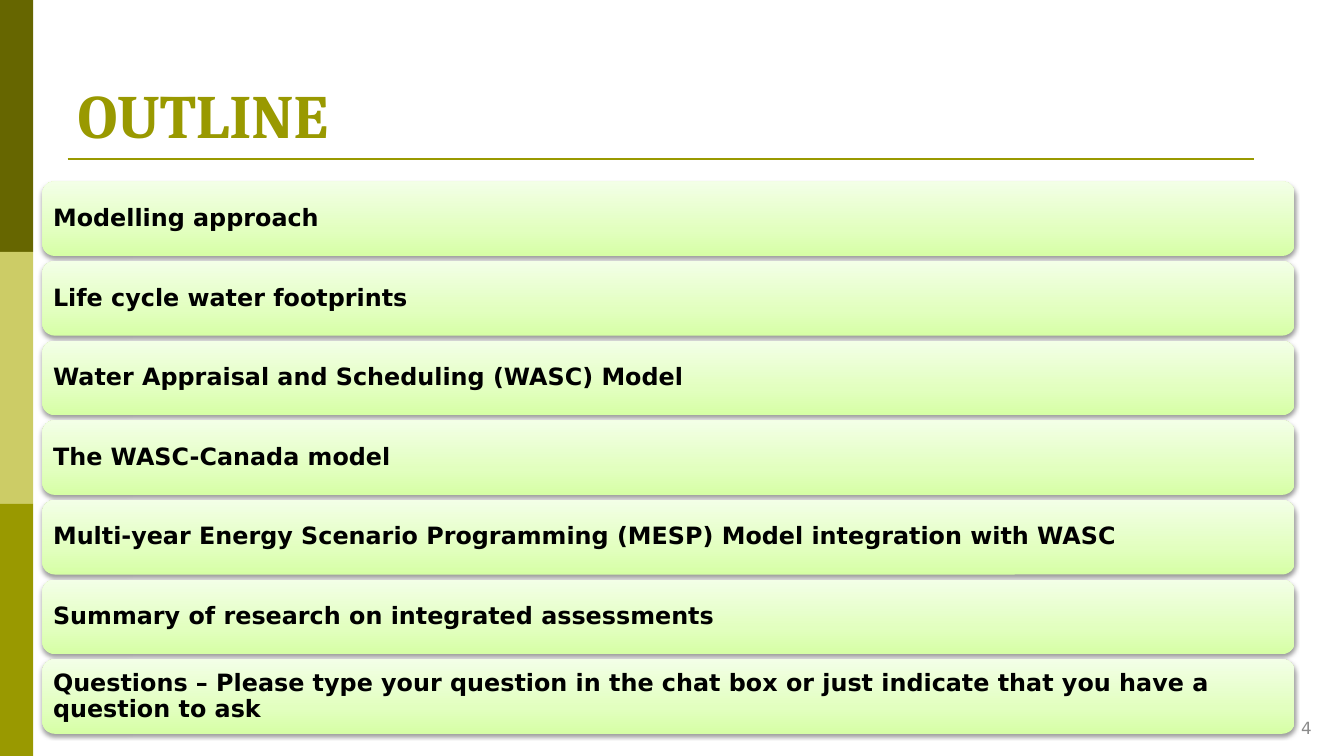
from dataclasses import dataclass

from lxml import etree
from pptx import Presentation
from pptx.dml.color import RGBColor
from pptx.enum import shapes, text
from pptx.oxml import ns, parse_xml
from pptx.util import Inches, Pt

OLIVE = RGBColor(0x99, 0x99, 0x00)
DARK_OLIVE = RGBColor(0x66, 0x66, 0x00)
PALE_OLIVE = RGBColor(0xCC, 0xCC, 0x66)
BLACK = RGBColor(0x00, 0x00, 0x00)
GREY = RGBColor(0x8C, 0x8C, 0x8C)
GREEN = RGBColor(0xD6, 0xFF, 0xA5)
LIGHT_GREEN = RGBColor(0xE2, 0xFF, 0xBF)
PALE_GREEN = RGBColor(0xF3, 0xFF, 0xE7)

BODY_FONT = "DejaVu Sans"
BAND_HEIGHT = 2.5
TOPIC_TOP = 1.8
TOPIC_PITCH = 0.79


@dataclass
class TextStyle:
    font: str
    size: float
    color: RGBColor
    bold: bool = False


@dataclass
class Topic:
    label: str
    top: float


TITLE_STYLE = TextStyle("Cambria", 44, OLIVE, True)
TOPIC_STYLE = TextStyle(BODY_FONT, 17, BLACK, True)
NUMBER_STYLE = TextStyle(BODY_FONT, 12, GREY)

LABELS = [
    "Modelling approach",
    "Life cycle water footprints",
    "Water Appraisal and Scheduling (WASC) Model",
    "The WASC-Canada model",
    "Multi-year Energy Scenario Programming (MESP) Model integration with WASC",
    "Summary of research on integrated assessments",
    "Questions – Please type your question in the chat box or just indicate "
    "that you have a question to ask",
]
TOPICS = [Topic(label, TOPIC_TOP + row * TOPIC_PITCH) for row, label in enumerate(LABELS)]


def write(shape, content: str, style: TextStyle, align, anchor):
    frame = shape.text_frame
    frame.word_wrap = True
    frame.auto_size = text.MSO_AUTO_SIZE.NONE
    frame.vertical_anchor = anchor
    paragraph = frame.paragraphs[0]
    paragraph.alignment = align
    run = paragraph.add_run()
    run.text = content
    run.font.name = style.font
    run.font.size = Pt(style.size)
    run.font.bold = style.bold
    run.font.color.rgb = style.color
    return paragraph


def add_band(slide, top: float, color: RGBColor) -> None:
    band = slide.shapes.add_shape(
        shapes.MSO_SHAPE.RECTANGLE, 0, Inches(top), Inches(0.33), Inches(BAND_HEIGHT))
    band.shadow.inherit = False
    band.fill.solid()
    band.fill.fore_color.rgb = color
    band.line.fill.background()


def add_rule(slide) -> None:
    rule = slide.shapes.add_connector(
        shapes.MSO_CONNECTOR.STRAIGHT, Inches(0.67), Inches(1.58), Inches(12.44), Inches(1.58))
    rule.line.color.rgb = OLIVE
    rule.line.width = Pt(1.5)
    etree.SubElement(rule.element.spPr, ns.qn("a:effectLst"))


def apply_gradient(shape) -> None:
    """Fill from green at the bottom to pale green at the top."""
    shape.fill.gradient()
    shape.fill.gradient_angle = 90
    stop_list = shape.element.spPr.find(f".//{ns.qn('a:gsLst')}")
    for stop in list(stop_list):
        stop_list.remove(stop)
    for percent, color in ((0, GREEN), (35, LIGHT_GREEN), (100, PALE_GREEN)):
        stop = etree.SubElement(stop_list, ns.qn("a:gs"), pos=str(percent * 1000))
        etree.SubElement(stop, ns.qn("a:srgbClr"), val=str(color))


def apply_shadow(shape) -> None:
    shape.shadow.inherit = False
    effects = shape.element.spPr.find(ns.qn("a:effectLst"))
    effects.append(parse_xml(
        f'<a:outerShdw {ns.nsdecls("a")} blurRad="40000" dist="20000" dir="5400000" '
        'rotWithShape="0"><a:srgbClr val="000000"><a:alpha val="38000"/></a:srgbClr>'
        '</a:outerShdw>'))


def add_topic(slide, topic: Topic) -> None:
    card = slide.shapes.add_shape(
        shapes.MSO_SHAPE.ROUNDED_RECTANGLE,
        Inches(0.42), Inches(topic.top), Inches(12.42), Inches(0.74))
    apply_gradient(card)
    card.line.fill.background()
    apply_shadow(card)
    frame = card.text_frame
    # The rounded outline already insets its text by about 0.04 inch.
    frame.margin_left = frame.margin_right = Inches(0.07)
    frame.margin_top = frame.margin_bottom = Inches(0.07)
    paragraph = write(card, topic.label, TOPIC_STYLE, text.PP_ALIGN.LEFT, text.MSO_ANCHOR.MIDDLE)
    paragraph.line_spacing = 0.9


def main() -> None:
    presentation = Presentation()
    presentation.slide_width = Inches(13.33)
    presentation.slide_height = Inches(7.5)
    slide = presentation.slides.add_slide(presentation.slide_layouts[5])

    for index, color in enumerate((DARK_OLIVE, PALE_OLIVE, OLIVE)):
        add_band(slide, index * BAND_HEIGHT, color)
    add_rule(slide)

    title = slide.shapes.title
    title.left, title.top = Inches(0.67), Inches(0.3)
    title.width, title.height = Inches(10.56), Inches(1.25)
    write(title, "OUTLINE", TITLE_STYLE, text.PP_ALIGN.LEFT, text.MSO_ANCHOR.BOTTOM)

    for topic in TOPICS:
        add_topic(slide, topic)

    number = slide.shapes.add_textbox(Inches(12.22), Inches(7.02), Inches(0.89), Inches(0.4))
    write(number, "4", NUMBER_STYLE, text.PP_ALIGN.RIGHT, text.MSO_ANCHOR.MIDDLE)

    presentation.save("out.pptx")


if __name__ == "__main__":
    main()
